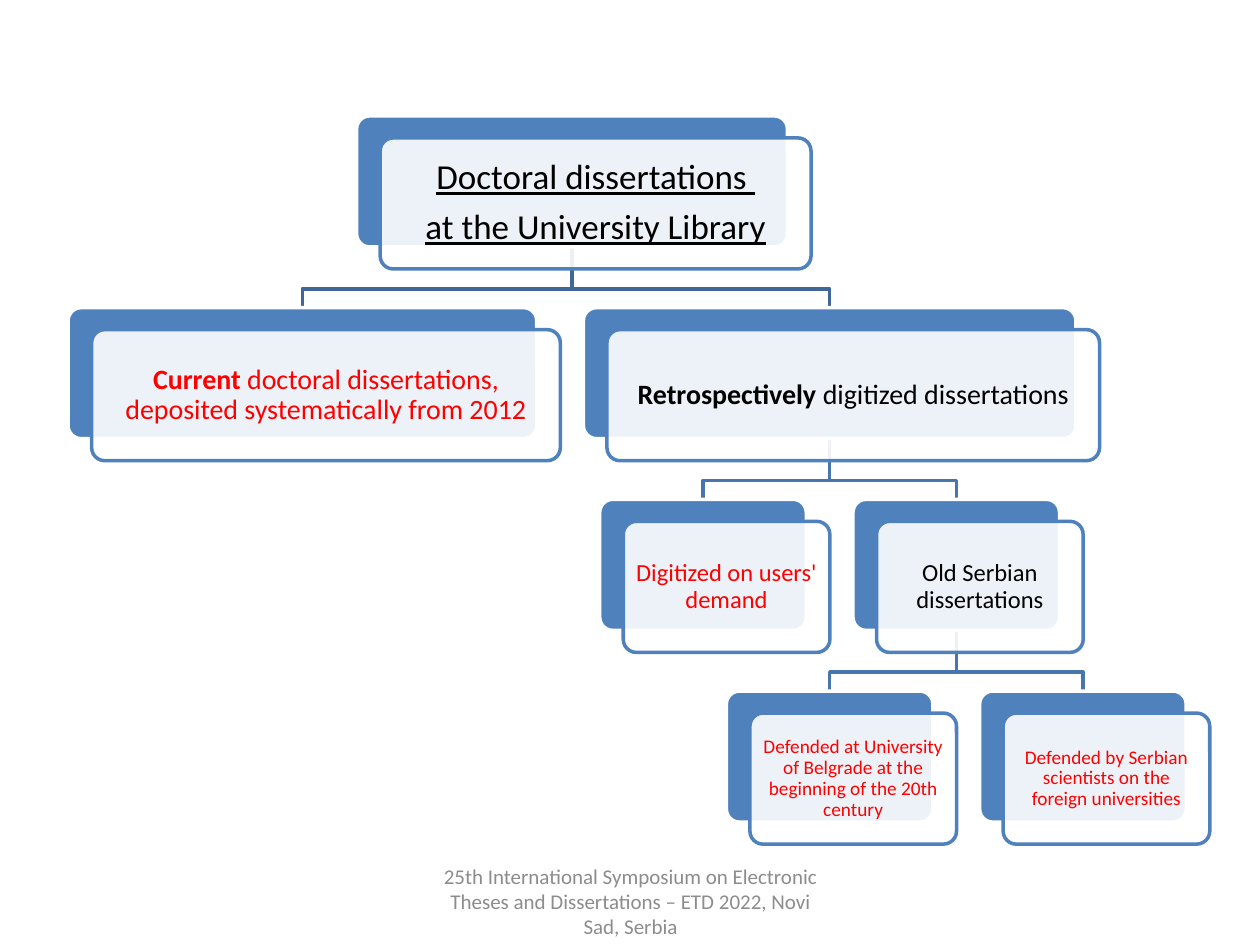
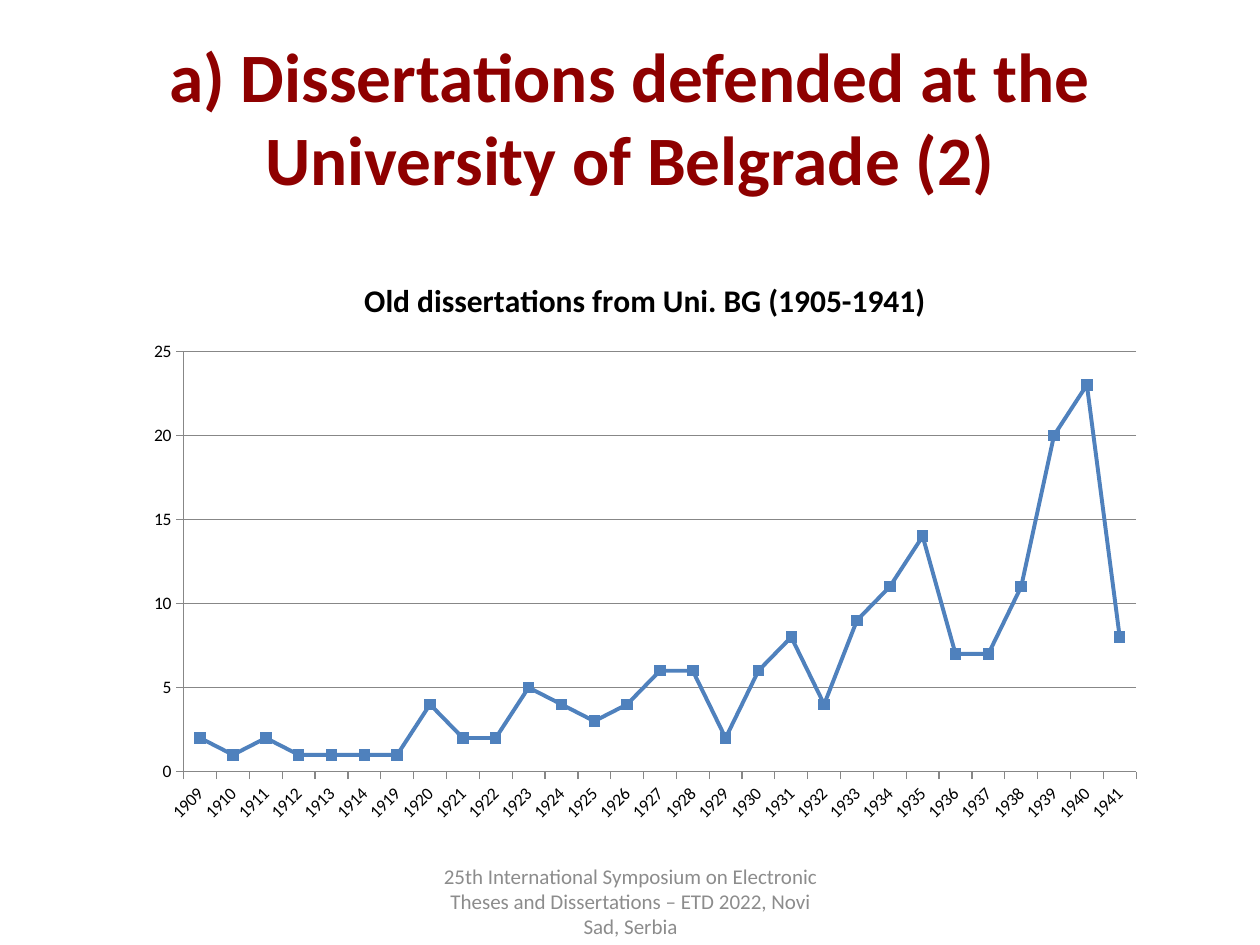
import dataclasses

import pptx
import pptx.chart.data
import pptx.dml.color
import pptx.enum.chart
import pptx.enum.shapes
import pptx.enum.text
import pptx.oxml
import pptx.oxml.ns
import pptx.util

RGBColor = pptx.dml.color.RGBColor
BLUE = RGBColor(0x4F, 0x81, 0xBD)
DARK_LINK = RGBColor(0x3F, 0x67, 0x97)
LINK = RGBColor(0x48, 0x75, 0xAC)
WHITE = RGBColor(0xFF, 0xFF, 0xFF)
BLACK = RGBColor(0, 0, 0)
RED = RGBColor(0xFF, 0, 0)
MAROON = RGBColor(0x8E, 0, 0)
FOOTER_GREY = RGBColor(0x8C, 0x8C, 0x8C)
AXIS_GREY = RGBColor(0x87, 0x87, 0x87)

FONT = "Calibri"
CELL = pptx.util.Inches(0.1)
COLUMNS, ROWS = 100, 75
CARD_HEIGHT = 10.4
CARD_SHIFT = (1.87, 1.75)
SIBLING_GAP = 3.7
LINK_BEND = 0.69
LEVELS = 4

TITLE_BOX = (5, 3, 90, 12.5)
FOOTER_BOX = (34.2, 69.5, 31.7, 4)
TREE_BOX = (5.4, 9.2, 80, 57.8)
CHART_BOX = (10.6, 20.2, 81.2, 46)

FOOTER = ("25th International Symposium on Electronic Theses and Dissertations"
          " – ETD 2022, Novi Sad, Serbia")
CHART_TITLE = "Old dissertations from Uni. BG (1905-1941)"
YEARS = [*range(1909, 1915), *range(1919, 1942)]
COUNTS = [2, 1, 2, 1, 1, 1, 1, 4, 2, 2, 5, 4, 3, 4, 6, 6, 2, 6, 8, 4,
          9, 11, 14, 7, 7, 11, 20, 23, 8]


@dataclasses.dataclass
class Node:
    """A card of the tree: its paragraphs, width, text format and children."""
    lines: list
    width: float
    size: float
    color: RGBColor = BLACK
    lead: str = ""
    underline: bool = False
    inset: float = 0.06
    children: tuple = ()


TREE = Node(
    ["Doctoral dissertations ", "at the University Library"], 34.2, 20,
    underline=True, inset=0.08, children=(
        Node(["doctoral dissertations, deposited systematically from 2012"],
             37.2, 16, RED, lead="Current ", inset=0.07),
        Node(["digitized dissertations"], 39.1, 16, lead="Retrospectively ",
             inset=0.07, children=(
                 Node(["Digitized on users' demand"], 16.4, 14, RED),
                 Node(["Old Serbian dissertations"], 16.4, 14, children=(
                     Node(["Defended at University of Belgrade at the "
                           "beginning of the 20th century"],
                          16.4, 11, RED, inset=0.05),
                     Node(["Defended by Serbian scientists on the foreign "
                           "universities"], 16.4, 11, RED, inset=0.05))))),
    ))


def cells(*lengths):
    """Turn grid units into slide lengths."""
    return [round(length * CELL) for length in lengths]


def format_font(font, size, color, bold=False, underline=False):
    """Set the shared typeface and the given format on a font."""
    font.name = FONT
    font.size = pptx.util.Pt(size)
    font.color.rgb = color
    font.bold = bold
    font.underline = underline


def write_text(shape, lines, size, color, lead="", bold=False, underline=False,
               inset=None, line_spacing=None, space_after=None):
    """Fill a shape with centred paragraphs, the first with a bold lead."""
    frame = shape.text_frame
    frame.word_wrap = True
    frame.auto_size = pptx.enum.text.MSO_AUTO_SIZE.NONE
    frame.vertical_anchor = pptx.enum.text.MSO_ANCHOR.MIDDLE
    if inset is not None:
        margin = pptx.util.Inches(inset)
        frame.margin_left = frame.margin_right = margin
        frame.margin_top = frame.margin_bottom = margin
    for index, line in enumerate(lines):
        paragraph = frame.add_paragraph() if index else frame.paragraphs[0]
        paragraph.alignment = pptx.enum.text.PP_ALIGN.CENTER
        paragraph.line_spacing = line_spacing
        paragraph.space_after = space_after
        parts = [(line, bold)]
        if lead and index == 0:
            parts.insert(0, (lead, True))
        for text, is_bold in parts:
            run = paragraph.add_run()
            run.text = text
            format_font(run.font, size, color, is_bold, underline)


def add_footer(slide, box):
    """Add the symposium line at the foot of a slide."""
    write_text(slide.shapes.add_textbox(*cells(*box)), [FOOTER], 12,
               FOOTER_GREY)


def add_title(slide, text, box):
    """Move and fill the title placeholder."""
    title = slide.shapes.title
    title.left, title.top, title.width, title.height = cells(*box)
    write_text(title, [text], 39.6, MAROON, bold=True)


def place_nodes(node, center, level=0, parent_center=None):
    """List each node with its centre, level and parent's centre."""
    placed = [(node, center, level, parent_center)]
    span = sum(child.width + SIBLING_GAP for child in node.children)
    left = center - (span - SIBLING_GAP) / 2
    for child in node.children:
        placed += place_nodes(child, left + child.width / 2, level + 1, center)
        left += child.width + SIBLING_GAP
    return placed


def add_link(slide, start, end, color):
    """Draw an elbow line from a parent's foot down to a child's head."""
    bend = start[1] + (end[1] - start[1]) * LINK_BEND
    builder = slide.shapes.build_freeform(*cells(*start))
    corners = [(start[0], bend), (end[0], bend), end]
    builder.add_line_segments([cells(*corner) for corner in corners],
                              close=False)
    link = builder.convert_to_shape()
    link.shadow.inherit = False
    link.fill.background()
    link.line.color.rgb = color
    link.line.width = pptx.util.Pt(2)


def add_panel(slide, box, fill, line):
    """Add a rounded rectangle with a fill and an outline."""
    panel = slide.shapes.add_shape(
        pptx.enum.shapes.MSO_SHAPE.ROUNDED_RECTANGLE, *cells(*box))
    panel.adjustments[0] = 0.1
    panel.shadow.inherit = False
    panel.fill.solid()
    panel.fill.fore_color.rgb = fill
    panel.line.color.rgb = line
    panel.line.width = pptx.util.Pt(2)
    return panel


def add_card(slide, node, left, top):
    """Add a blue panel and the translucent text panel shifted over it."""
    add_panel(slide, (left, top, node.width, CARD_HEIGHT), BLUE, WHITE)
    front = add_panel(slide, (left + CARD_SHIFT[0], top + CARD_SHIFT[1],
                              node.width, CARD_HEIGHT), WHITE, BLUE)
    color = front.fill._xPr.find(".//" + pptx.oxml.ns.qn("a:srgbClr"))
    color.append(pptx.oxml.parse_xml(
        f'<a:alpha {pptx.oxml.ns.nsdecls("a")} val="90000"/>'))
    write_text(front, node.lines, node.size, node.color, lead=node.lead,
               underline=node.underline, inset=node.inset, line_spacing=0.9,
               space_after=pptx.util.Pt(0.35 * node.size))


def add_tree(slide, root, box):
    """Lay out the tree in its box, links behind the cards."""
    left, top, width, height = box
    pitch = (height - CARD_HEIGHT - CARD_SHIFT[1]) / (LEVELS - 1)
    placed = place_nodes(root, left + width / 2)
    for _, center, level, parent_center in placed[1:]:
        head = top + level * pitch
        foot = head - pitch + CARD_HEIGHT
        add_link(slide, (parent_center, foot), (center, head),
                 DARK_LINK if level == 1 else LINK)
    for node, center, level, _ in placed:
        add_card(slide, node, center - node.width / 2, top + level * pitch)


def add_line_chart(slide, box):
    """Add the line chart of dissertations per year."""
    data = pptx.chart.data.CategoryChartData()
    data.categories = [str(year) for year in YEARS]
    data.add_series(CHART_TITLE, COUNTS)
    chart = slide.shapes.add_chart(
        pptx.enum.chart.XL_CHART_TYPE.LINE_MARKERS, *cells(*box), data).chart
    format_font(chart.font, 10, BLACK)
    chart.has_legend = False
    chart.has_title = True
    title = chart.chart_title.text_frame
    title.text = CHART_TITLE
    format_font(title.paragraphs[0].runs[0].font, 18, BLACK, bold=True)

    plot = chart.plots[0]
    plot.vary_by_categories = False
    series = plot.series[0]
    series.smooth = False
    series.format.line.color.rgb = BLUE
    series.format.line.width = pptx.util.Pt(2.25)
    series.marker.style = pptx.enum.chart.XL_MARKER_STYLE.SQUARE
    series.marker.size = 6
    series.marker.format.fill.solid()
    series.marker.format.fill.fore_color.rgb = BLUE
    series.marker.format.line.color.rgb = BLUE

    years, counts = chart.category_axis, chart.value_axis
    counts.minimum_scale, counts.maximum_scale = 0, 25
    counts.major_unit = 5
    counts.has_major_gridlines = True
    for line in (years.format.line, counts.format.line,
                 counts.major_gridlines.format.line):
        line.color.rgb = AXIS_GREY
        line.width = pptx.util.Pt(0.75)
    for axis in (years, counts):
        axis.major_tick_mark = pptx.enum.chart.XL_TICK_MARK.OUTSIDE
        format_font(axis.tick_labels.font, 10, BLACK)
    body = years._element.find(".//" + pptx.oxml.ns.qn("a:bodyPr"))
    body.set("rot", "-2700000")
    body.set("vert", "horz")


def build_tree_slide(presentation):
    """Build the slide with the tree of dissertation groups."""
    slide = presentation.slides.add_slide(presentation.slide_layouts[6])
    add_footer(slide, FOOTER_BOX)
    add_tree(slide, TREE, TREE_BOX)


def build_chart_slide(presentation):
    """Build the slide with the yearly counts."""
    slide = presentation.slides.add_slide(presentation.slide_layouts[5])
    add_title(slide, "a) Dissertations defended at the University of Belgrade (2)",
              TITLE_BOX)
    add_footer(slide, FOOTER_BOX)
    add_line_chart(slide, CHART_BOX)


def main():
    """Build and save the presentation."""
    presentation = pptx.Presentation()
    presentation.slide_width, presentation.slide_height = cells(COLUMNS, ROWS)
    build_tree_slide(presentation)
    build_chart_slide(presentation)
    presentation.save("out.pptx")


if __name__ == "__main__":
    main()
